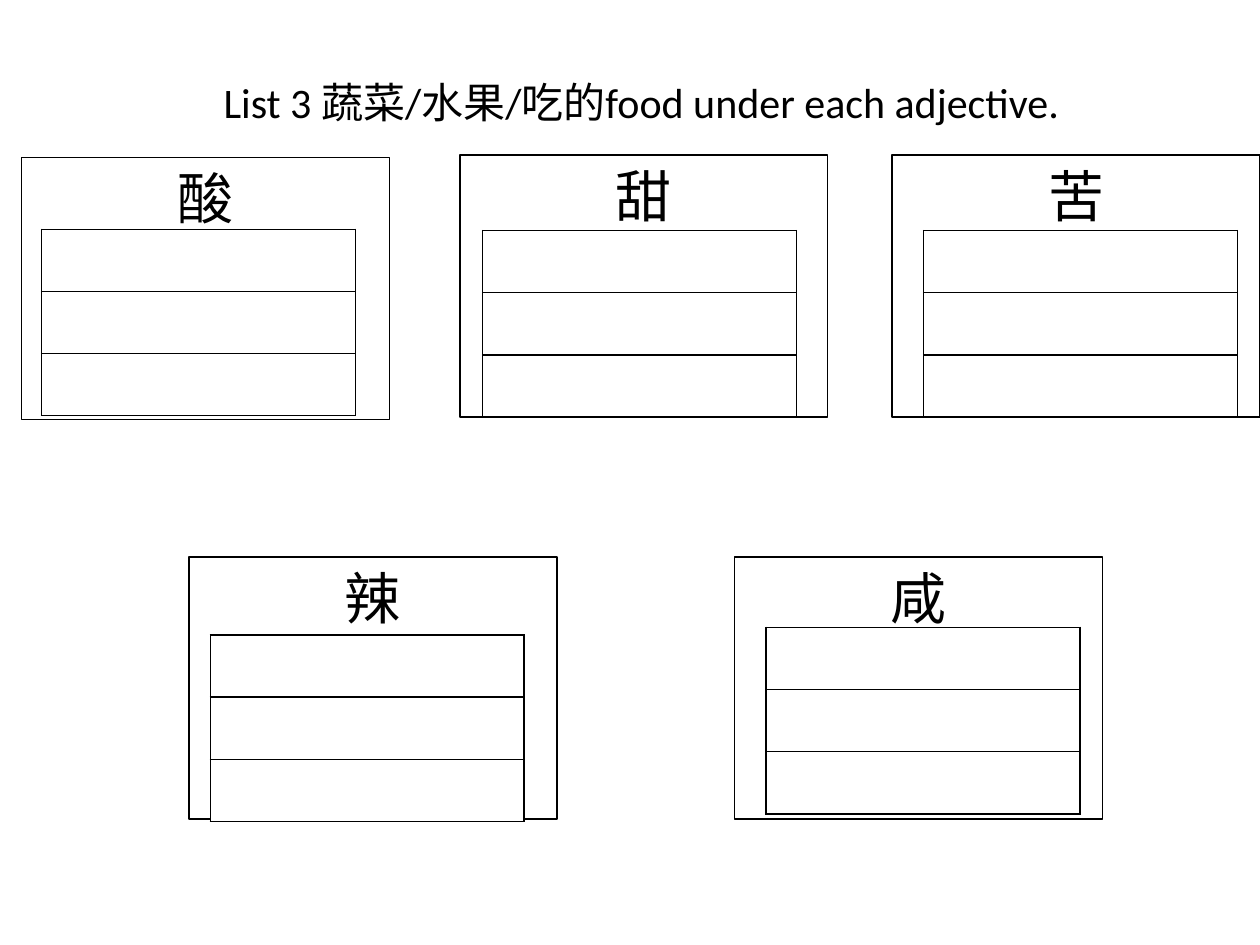
from lxml.etree import SubElement
from pptx import Presentation
from pptx.dml.color import RGBColor
from pptx.enum.shapes import MSO_SHAPE
from pptx.enum.text import MSO_ANCHOR, PP_ALIGN
from pptx.oxml.ns import qn
from pptx.util import Inches, Pt

BLACK = RGBColor(0, 0, 0)
WHITE = RGBColor(255, 255, 255)
FONT = "Calibri"
BOX_WIDTH, BOX_HEIGHT = 2.92, 2.08
TABLE_WIDTH, ROW_HEIGHT, ROWS = 2.49, 0.493, 3

# Adjective, box left and top, table left and top
TASTES = [
    ("辣", 1.5, 4.42, 1.67, 5.04),
    ("咸", 5.83, 4.42, 6.08, 4.98),
    ("酸", 0.17, 1.25, 0.33, 1.82),
    ("甜", 3.65, 1.23, 3.83, 1.83),
    ("苦", 7.08, 1.23, 7.33, 1.83),
]


def write_centred(frame, text, size):
    frame.word_wrap = True
    para = frame.paragraphs[0]
    para.alignment = PP_ALIGN.CENTER
    span = para.add_run()
    span.text = text
    span.font.name = FONT
    span.font.size = Pt(size)
    span.font.color.rgb = BLACK
    return para


def add_borders(cell):
    properties = cell._tc.get_or_add_tcPr()
    for side in ("a:lnL", "a:lnR", "a:lnT", "a:lnB"):
        line = SubElement(properties, qn(side), w=str(Pt(1)))
        fill = SubElement(line, qn("a:solidFill"))
        SubElement(fill, qn("a:srgbClr"), val=str(BLACK))


deck = Presentation()
deck.slide_width = Inches(10)
deck.slide_height = Inches(7.5)
slide = deck.slides.add_slide(deck.slide_layouts[5])

title = slide.shapes.title
title.left, title.top = Inches(0.84), Inches(0)
title.width, title.height = Inches(8.5), Inches(1.61)
title.text_frame.vertical_anchor = MSO_ANCHOR.MIDDLE
write_centred(title.text_frame, "List 3 蔬菜/水果/吃的food under each adjective.", 24)

for adjective, left, top, _, _ in TASTES:
    box = slide.shapes.add_shape(
        MSO_SHAPE.RECTANGLE, Inches(left), Inches(top), Inches(BOX_WIDTH), Inches(BOX_HEIGHT)
    )
    box.shadow.inherit = False
    box.fill.background()
    box.line.color.rgb = BLACK
    box.line.width = Pt(0.75)
    box.text_frame.vertical_anchor = MSO_ANCHOR.TOP
    para = write_centred(box.text_frame, adjective, 32)
    para.space_before = Pt(6.4)

for _, _, _, left, top in TASTES:
    table = slide.shapes.add_table(
        ROWS, 1, Inches(left), Inches(top), Inches(TABLE_WIDTH), Inches(ROWS * ROW_HEIGHT)
    ).table
    for row in table.rows:
        row.height = Inches(ROW_HEIGHT)
        cell = row.cells[0]
        add_borders(cell)
        cell.fill.solid()
        cell.fill.fore_color.rgb = WHITE

deck.save("out.pptx")
